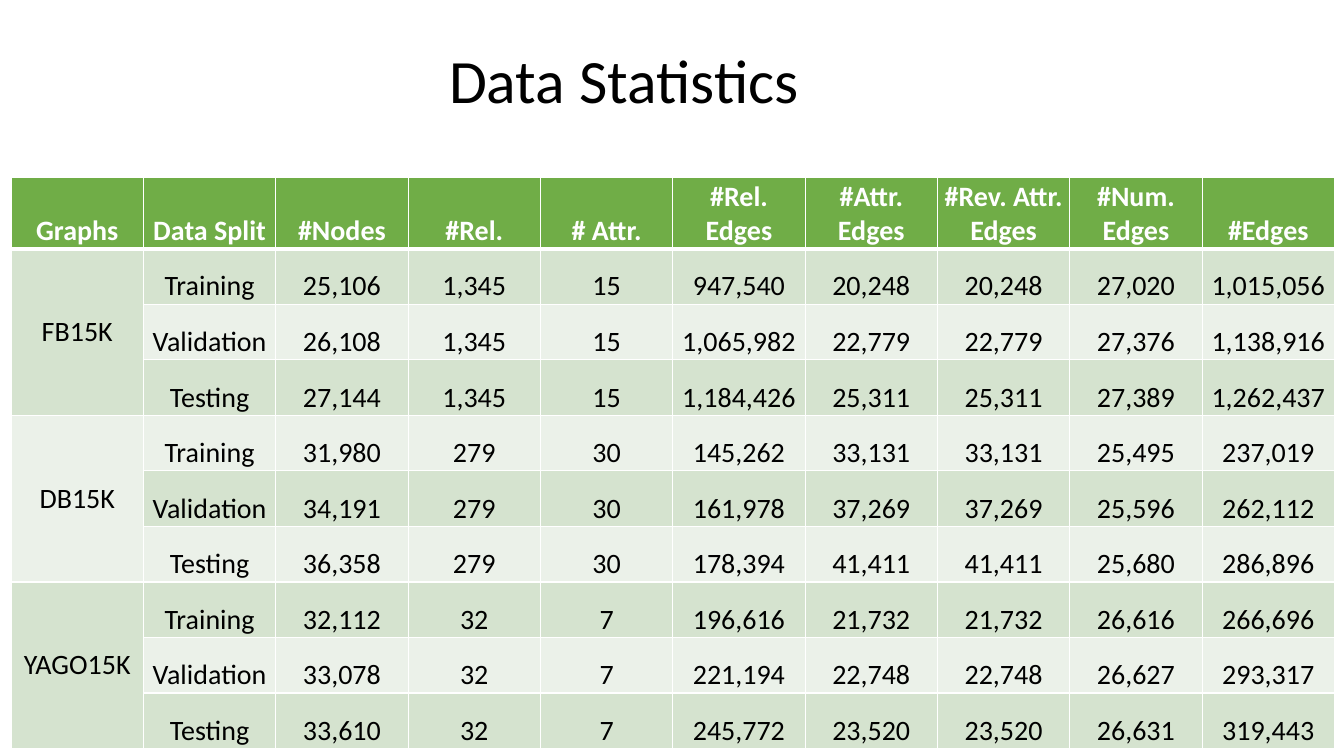
"""Build the Data Statistics slide with its table of graph sizes per data split."""
from lxml import etree
from pptx import Presentation, util as u
from pptx.dml import color
from pptx.enum import text
from pptx.oxml import ns

COLORS = {"header": "70AD47", "dark_band": "D5E3CF", "light_band": "EBF1E9",
          "white": "FFFFFF", "black": "000000"}
FONT = "Calibri"

headings = ["Graphs", "Data Split", "#Nodes", "#Rel.", "# Attr.", "#Rel. Edges",
            "#Attr. Edges", "#Rev. Attr. Edges", "#Num. Edges", "#Edges"]
splits = ["Training", "Validation", "Testing"]
graphs = {
    "FB15K": ["25,106 1,345 15 947,540 20,248 20,248 27,020 1,015,056",
              "26,108 1,345 15 1,065,982 22,779 22,779 27,376 1,138,916",
              "27,144 1,345 15 1,184,426 25,311 25,311 27,389 1,262,437"],
    "DB15K": ["31,980 279 30 145,262 33,131 33,131 25,495 237,019",
              "34,191 279 30 161,978 37,269 37,269 25,596 262,112",
              "36,358 279 30 178,394 41,411 41,411 25,680 286,896"],
    "YAGO15K": ["32,112 32 7 196,616 21,732 21,732 26,616 266,696",
                "33,078 32 7 221,194 22,748 22,748 26,627 293,317",
                "33,610 32 7 245,772 23,520 23,520 26,631 319,443"],
}


def style_font(font, size, hex_color, bold=False):
    font.name = FONT
    font.size = u.Pt(size)
    font.bold = bold
    font.color.rgb = color.RGBColor.from_string(hex_color)


def add_border(cell, side, points):
    line = etree.SubElement(cell._tc.get_or_add_tcPr(), ns.qn(f"a:ln{side}"),
                            w=str(u.Pt(points)))
    solid = etree.SubElement(line, ns.qn("a:solidFill"))
    etree.SubElement(solid, ns.qn("a:srgbClr"), val=COLORS["white"])


prs = Presentation()
prs.slide_width, prs.slide_height = u.Cm(33.87), u.Cm(19.05)
slide = prs.slides.add_slide(prs.slide_layouts[5])

title = slide.shapes.title
title.left, title.top, title.width, title.height = u.Cm(1.12), u.Cm(0.23), u.Cm(29.21), u.Cm(2.84)
title.text_frame.text = "Data Statistics"
title.text_frame.vertical_anchor = text.MSO_ANCHOR.BOTTOM
heading = title.text_frame.paragraphs[0]
heading.alignment = text.PP_ALIGN.CENTER
heading.line_spacing = 0.9
style_font(heading.runs[0].font, 44, COLORS["black"])

rows = [headings]
for graph, counts in graphs.items():
    for split, line in zip(splits, counts):
        rows.append([graph if split == splits[0] else "", split, *line.split()])

statistics = slide.shapes.add_table(len(rows), len(headings), u.Cm(0.28), u.Cm(4.47),
                                    u.Cm(33.35), u.Cm(14.33)).table
for column in statistics.columns:
    column.width = u.Cm(3.335)

for r, values in enumerate(rows):
    is_header = r == 0
    statistics.rows[r].height = u.Cm(1.8 if is_header else 1.4)
    band = "header" if is_header else "dark_band" if r % 2 else "light_band"
    for c, value in enumerate(values):
        cell = statistics.cell(r, c)
        cell.margin_left = cell.margin_right = u.Cm(0.04)
        cell.margin_top = cell.margin_bottom = u.Cm(0.02)
        for side, points in (("L", 1), ("R", 1), ("T", 3 if r == 1 else 1),
                             ("B", 3 if is_header else 1)):
            add_border(cell, side, points)
        cell.fill.solid()
        cell.fill.fore_color.rgb = color.RGBColor.from_string(COLORS[band])
        spans_graph = c == 0 and not is_header
        cell.vertical_anchor = text.MSO_ANCHOR.MIDDLE if spans_graph else text.MSO_ANCHOR.BOTTOM
        cell.text_frame.text = value
        entry = cell.text_frame.paragraphs[0]
        entry.alignment = text.PP_ALIGN.CENTER
        style_font(entry.font, 20, COLORS["white" if is_header else "black"], is_header)
        for run in entry.runs:
            style_font(run.font, 20, COLORS["white" if is_header else "black"], is_header)

for first in range(1, len(rows), len(splits)):
    statistics.cell(first, 0).merge(statistics.cell(first + len(splits) - 1, 0))

prs.save("out.pptx")
